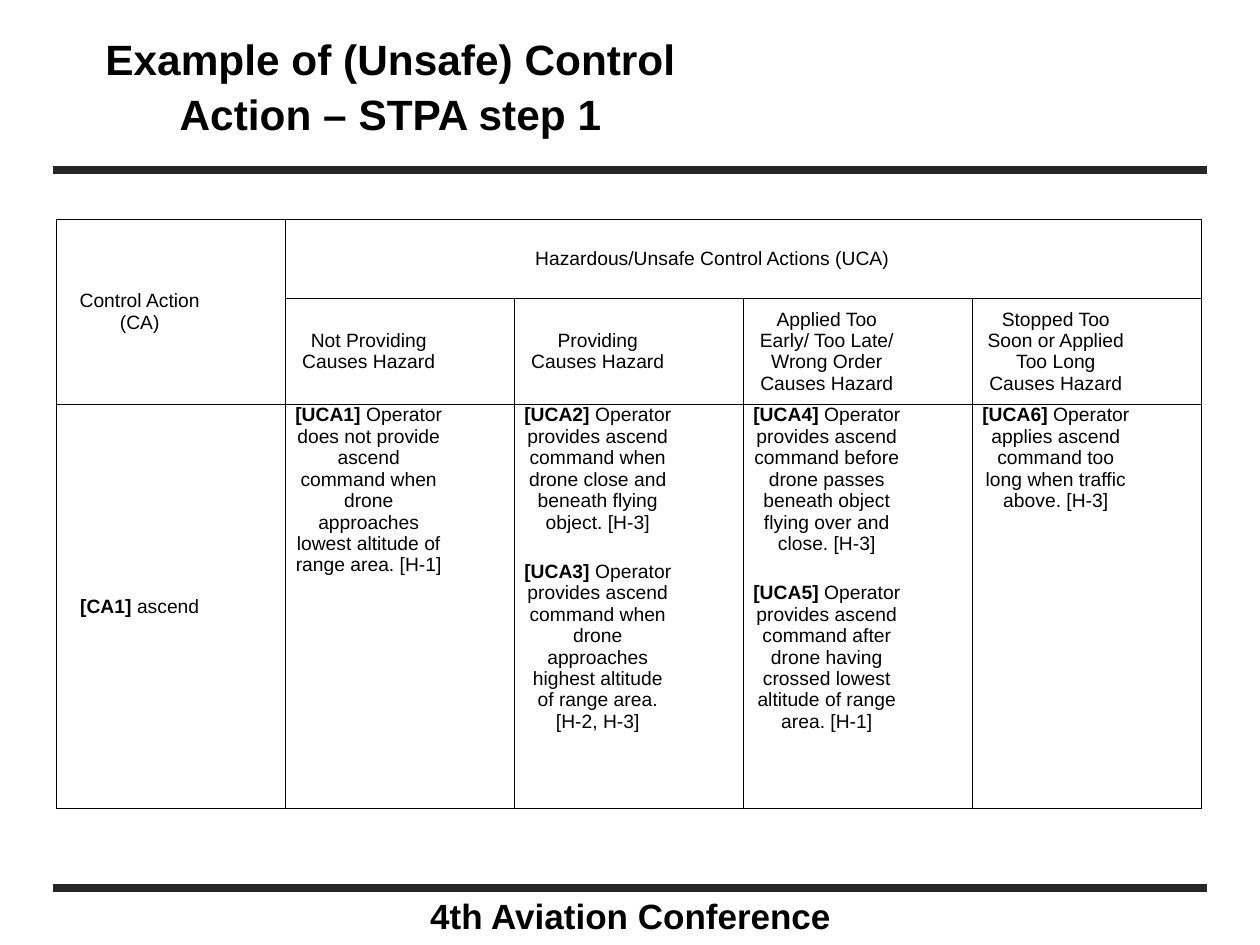
"""Build a slide with a table of unsafe control actions for STPA step 1."""
from lxml import etree
from pptx import Presentation, util as u
from pptx.dml.color import RGBColor
from pptx.enum import shapes, text
from pptx.oxml import parse_xml
from pptx.oxml.ns import nsdecls, qn


def tint(code):
    return RGBColor.from_string(code)


def style(para, size, bold=None):
    para.alignment = text.PP_ALIGN.CENTER
    font = para.font
    font.name, font.size, font.bold = "Arial", u.Pt(size), bold
    font.color.rgb = tint("000000")


deck = Presentation()
deck.slide_width, deck.slide_height = u.Inches(10), u.Inches(7.5)
slide = deck.slides.add_slide(deck.slide_layouts[6])
wide, high = deck.slide_width, deck.slide_height

for y in (0.18, 0.94):
    rule = slide.shapes.add_connector(
        shapes.MSO_CONNECTOR.STRAIGHT,
        int(wide * 0.042), int(high * y), int(wide * 0.958), int(high * y))
    rule.line.color.rgb = tint("262626")
    rule.line.width = u.Pt(4.5)
    etree.SubElement(rule._element.spPr, qn("a:effectLst"))

heads = [
    ("Example of (Unsafe) Control Action – STPA step 1", 0.45, 0.19, 5.3, 0.95, 24.2, 1.08),
    ("4th Aviation Conference", 1.42, 7.06, 7.17, 0.41, 20, 1),
]
for words, x, y, w, h, size, gap in heads:
    box = slide.shapes.add_textbox(*map(u.Inches, (x, y, w, h)))
    frame = box.text_frame
    frame.word_wrap = True
    frame.vertical_anchor = text.MSO_ANCHOR.MIDDLE
    frame.margin_left = frame.margin_right = u.Inches(0.05)
    frame.margin_top = frame.margin_bottom = u.Inches(0.05)
    frame.text = words
    para = frame.paragraphs[0]
    style(para, size, True)
    para.line_spacing = gap

rows = [
    ["Control Action (CA)", "Hazardous/Unsafe Control Actions (UCA)", "", "", ""],
    ["", "Not Providing Causes Hazard", "Providing Causes Hazard",
     "Applied Too Early/ Too Late/ Wrong Order Causes Hazard",
     "Stopped Too Soon or Applied Too Long Causes Hazard"],
    ["[CA1] ascend",
     "[UCA1] Operator does not provide ascend command when drone approaches "
     "lowest altitude of range area. [H-1]",
     "[UCA2] Operator provides ascend command when drone close and beneath "
     "flying object. [H-3]\n"
     "[UCA3] Operator provides ascend command when drone approaches highest "
     "altitude of range area. [H-2, H-3]",
     "[UCA4] Operator provides ascend command before drone passes beneath "
     "object flying over and close. [H-3]\n"
     "[UCA5] Operator provides ascend command after drone having crossed "
     "lowest altitude of range area. [H-1]",
     "[UCA6] Operator applies ascend command too long when traffic above. [H-3]"],
]
grid = slide.shapes.add_table(
    3, 5, *map(u.Inches, (0.45, 1.74, 9.09, 4.68))).table
grid.first_row = grid.horz_banding = False
for row, h in zip(grid.rows, (0.63, 0.84, 3.21)):
    row.height = u.Inches(h)
grid.cell(0, 0).merge(grid.cell(1, 0))
grid.cell(0, 1).merge(grid.cell(0, 4))

for r, row in enumerate(rows):
    for c, words in enumerate(row):
        cell = grid.cell(r, c)
        cell.fill.background()
        cell.margin_left, cell.margin_right = u.Inches(0.07), u.Inches(0.57)
        cell.margin_top = cell.margin_bottom = 0
        top = r == 2 and c > 0
        cell.vertical_anchor = text.MSO_ANCHOR.TOP if top else text.MSO_ANCHOR.MIDDLE
        props = cell._tc.get_or_add_tcPr()
        for i, side in enumerate("LRTB"):
            props.insert(i, parse_xml(
                f'<a:ln{side} {nsdecls("a")} w="6350"><a:solidFill>'
                f'<a:srgbClr val="000000"/></a:solidFill></a:ln{side}>'))
        for n, line in enumerate(words.split("\n")):
            frame = cell.text_frame
            para = frame.add_paragraph() if n else frame.paragraphs[0]
            style(para, 11)
            if n:
                para.space_before = u.Pt(16)
            if line.startswith("["):
                tag, line = line.split(" ", 1)
                run = para.add_run()
                run.text, run.font.bold = tag + " ", True
            if line:
                para.add_run().text = line

deck.save("out.pptx")
